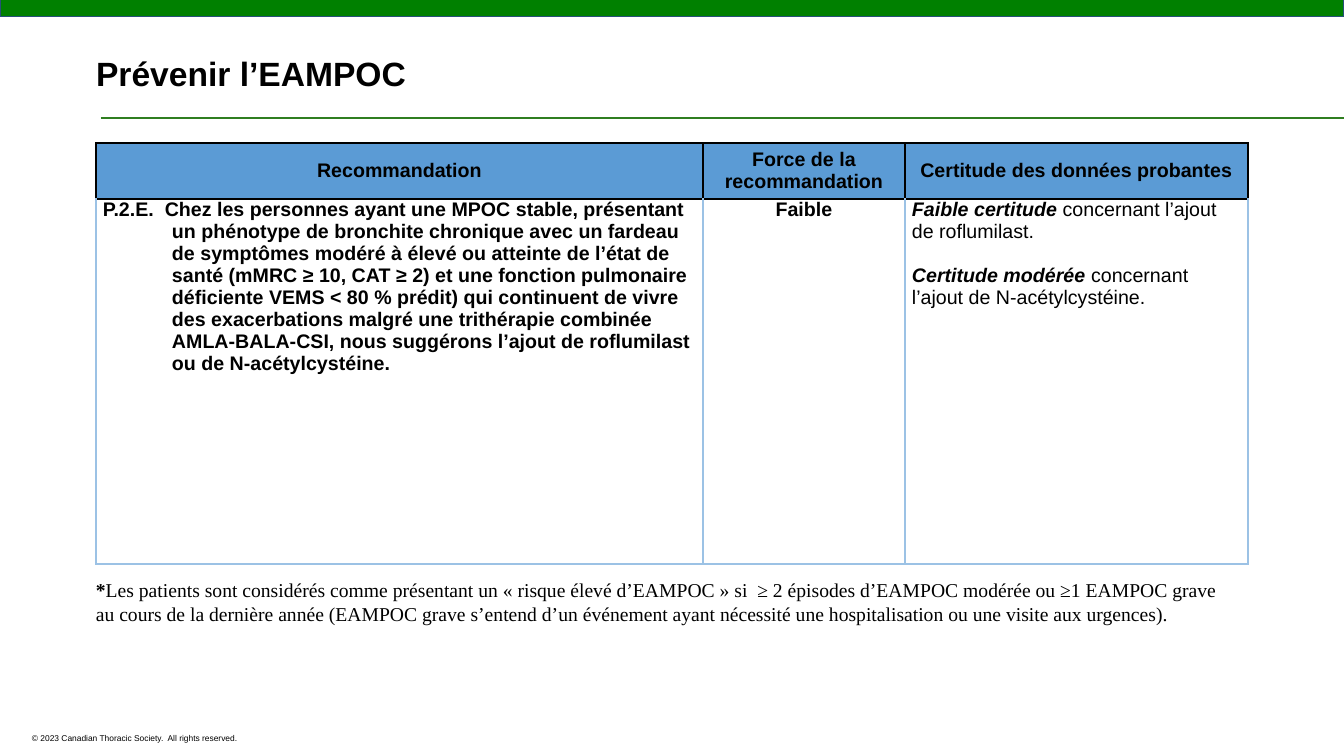
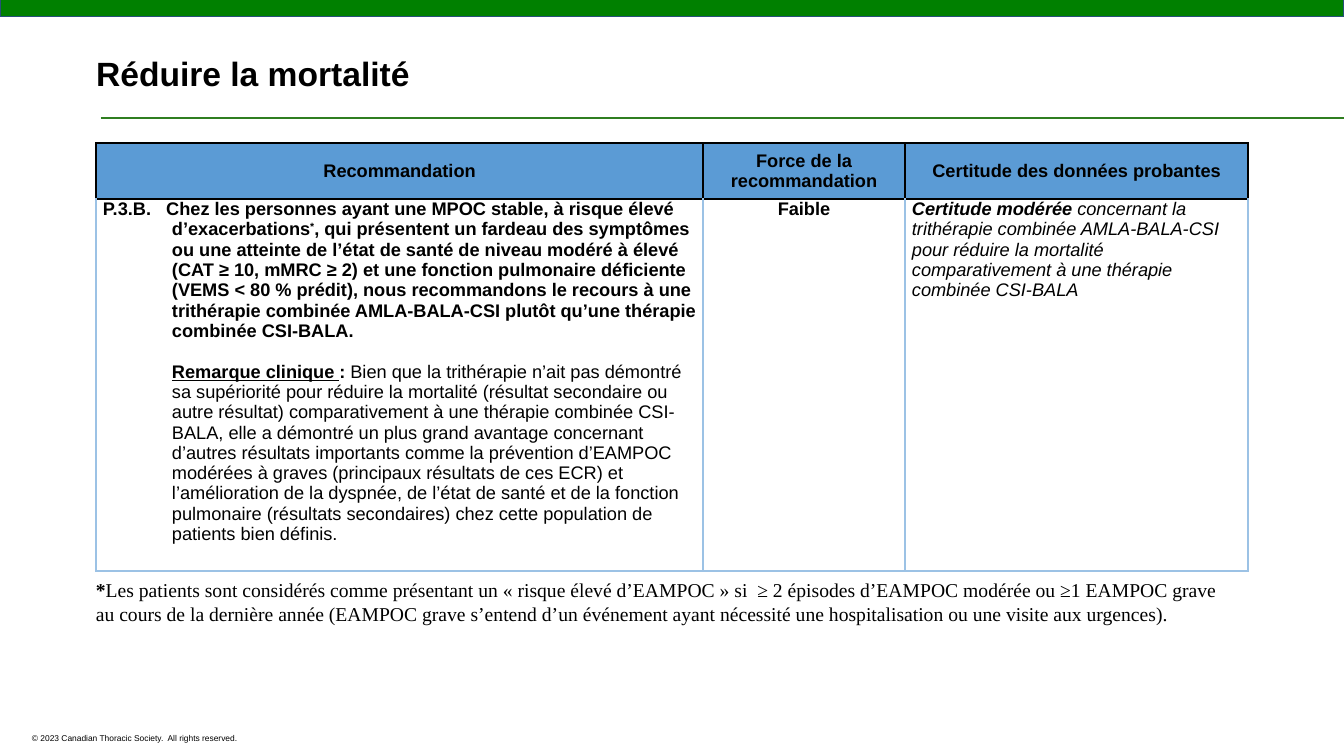
from dataclasses import dataclass

from lxml.etree import SubElement
from pptx import Presentation
from pptx.dml.color import RGBColor
from pptx.enum.shapes import MSO_CONNECTOR, MSO_SHAPE
from pptx.enum.text import MSO_ANCHOR, MSO_AUTO_SIZE, PP_ALIGN
from pptx.oxml.ns import qn
from pptx.slide import Slide
from pptx.table import _Cell
from pptx.text.text import TextFrame
from pptx.util import Emu, Pt

# Scale, colours and fonts
SLIDE_WIDTH, SLIDE_HEIGHT = 1344, 756
EMU_PER_PX = 914400 / 100.8
BLACK, WHITE = "000000", "FFFFFF"
BAND_GREEN, BAND_EDGE, RULE_GREEN = "008000", "265178", "2F7E20"
HEADER_BLUE, BORDER_BLUE = "5B9BD5", "9CC2E5"
SANS, SERIF = "Arial", "Times New Roman"

# Table measures
TABLE_LEFT, TABLE_TOP = 96, 143
COLUMN_WIDTHS = (607, 202, 343)
HEADER_HEIGHT = 56
CELL_MARGIN = 7
HANGING_INDENT = 69
GAP_PER_POINT = 1.12
HEADERS = ("Recommandation", "Force de la recommandation", "Certitude des données probantes")

COPYRIGHT = "© 2023 Canadian Thoracic Society.  All rights reserved."


@dataclass(frozen=True)
class Span:
    text: str
    bold: bool = False
    italic: bool = False
    underline: bool = False
    superscript: bool = False


@dataclass(frozen=True)
class TextBlock:
    spans: tuple[Span, ...]
    indent: int = 0
    hanging: int = 0


@dataclass(frozen=True)
class Recommendation:
    title: str
    font_size: int
    body_height: int
    statement: tuple[TextBlock, ...]
    strength: str
    certainty: tuple[TextBlock, ...]


FOOTNOTE = TextBlock((
    Span("*", bold=True),
    Span("Les patients sont considérés comme présentant un « risque élevé d’EAMPOC » si  ≥ 2 épisodes "
         "d’EAMPOC modérée ou ≥1 EAMPOC grave au cours de la dernière année (EAMPOC grave s’entend d’un "
         "événement ayant nécessité une hospitalisation ou une visite aux urgences)."),
))

RECOMMENDATIONS = (
    Recommendation(
        title="Prévenir l’EAMPOC",
        font_size=14,
        body_height=365,
        statement=(
            TextBlock((
                Span("P.2.E.  Chez les personnes ayant une MPOC stable, présentant un phénotype de bronchite "
                     "chronique avec un fardeau de symptômes modéré à élevé ou atteinte de l’état de santé "
                     "(mMRC ≥ 10, CAT ≥ 2) et une fonction pulmonaire déficiente VEMS < 80 % prédit) qui "
                     "continuent de vivre des exacerbations malgré une trithérapie combinée AMLA-BALA-CSI, "
                     "nous suggérons l’ajout de roflumilast ou de N-acétylcystéine.", bold=True),
            ), HANGING_INDENT, HANGING_INDENT),
        ),
        strength="Faible",
        certainty=(
            TextBlock((
                Span("Faible certitude ", bold=True, italic=True),
                Span("concernant l’ajout de roflumilast."),
            )),
            TextBlock((
                Span("Certitude modérée ", bold=True, italic=True),
                Span("concernant l’ajout de N-acétylcystéine."),
            )),
        ),
    ),
    Recommendation(
        title="Réduire la mortalité",
        font_size=13,
        body_height=372,
        statement=(
            TextBlock((
                Span("P.3.B.   Chez les personnes ayant une MPOC stable, à risque élevé d’exacerbations", bold=True),
                Span("*", bold=True, superscript=True),
                Span(", qui présentent un fardeau des symptômes ou une atteinte de l’état de santé de niveau "
                     "modéré à élevé (CAT ≥ 10, mMRC ≥ 2) et une fonction pulmonaire déficiente (VEMS < 80 % "
                     "prédit), nous recommandons le recours à une trithérapie combinée AMLA-BALA-CSI plutôt "
                     "qu’une thérapie combinée CSI-BALA.", bold=True),
            ), HANGING_INDENT, HANGING_INDENT),
            TextBlock((
                Span("Remarque clinique ", bold=True, underline=True),
                Span(": ", bold=True),
                Span("Bien que la trithérapie n’ait pas démontré sa supériorité pour réduire la mortalité "
                     "(résultat secondaire ou autre résultat) comparativement à une thérapie combinée CSI-BALA, "
                     "elle a démontré un plus grand avantage concernant d’autres résultats importants comme la "
                     "prévention d’EAMPOC modérées à graves (principaux résultats de ces ECR) et l’amélioration "
                     "de la dyspnée, de l’état de santé et de la fonction pulmonaire (résultats secondaires) "
                     "chez cette population de patients bien définis."),
            ), HANGING_INDENT),
        ),
        strength="Faible",
        certainty=(
            TextBlock((
                Span("Certitude modérée", bold=True, italic=True),
                Span(" concernant la trithérapie combinée AMLA-BALA-CSI pour réduire la mortalité "
                     "comparativement à une thérapie combinée CSI-BALA", italic=True),
            )),
        ),
    ),
)


def px(length: int) -> Emu:
    return Emu(round(length * EMU_PER_PX))


def color(value: str) -> RGBColor:
    return RGBColor.from_string(value)


def plain(text: str, bold: bool = False) -> tuple[TextBlock, ...]:
    return (TextBlock((Span(text, bold),)),)


def write_text(frame: TextFrame, blocks: tuple[TextBlock, ...], *, size: int, font: str = SANS,
               align: PP_ALIGN = PP_ALIGN.LEFT) -> None:
    """Fill a text frame; later paragraphs are set off by about one line."""
    for index, block in enumerate(blocks):
        paragraph = frame.add_paragraph() if index else frame.paragraphs[0]
        paragraph.alignment = align
        if index:
            paragraph.space_before = Pt(size * GAP_PER_POINT)
        if block.indent:
            properties = paragraph._p.get_or_add_pPr()
            properties.set("marL", str(px(block.indent)))
            properties.set("indent", str(-px(block.hanging)))
        for span in block.spans:
            run = paragraph.add_run()
            run.text = span.text
            run.font.name = font
            run.font.size = Pt(size)
            run.font.color.rgb = color(BLACK)
            run.font.bold = span.bold
            run.font.italic = span.italic
            run.font.underline = span.underline
            if span.superscript:
                run._r.get_or_add_rPr().set("baseline", "30000")


def add_text(slide: Slide, left: int, top: int, width: int, height: int,
             blocks: tuple[TextBlock, ...], *, size: int, font: str = SANS) -> None:
    frame = slide.shapes.add_textbox(px(left), px(top), px(width), px(height)).text_frame
    frame.word_wrap = True
    write_text(frame, blocks, size=size, font=font)


def add_frame(slide: Slide) -> None:
    """Draw the top band, the rule under the title and the copyright line."""
    band = slide.shapes.add_shape(MSO_SHAPE.RECTANGLE, 0, 0, px(SLIDE_WIDTH), px(17))
    band.shadow.inherit = False
    band.fill.solid()
    band.fill.fore_color.rgb = color(BAND_GREEN)
    band.line.color.rgb = color(BAND_EDGE)
    band.line.width = Pt(0.75)

    rule = slide.shapes.add_connector(MSO_CONNECTOR.STRAIGHT, px(101), px(118), px(SLIDE_WIDTH), px(118))
    rule.line.color.rgb = color(RULE_GREEN)
    rule.line.width = Pt(1)
    SubElement(rule._element.spPr, qn("a:effectLst"))

    add_text(slide, 22, 728, 320, 20, plain(COPYRIGHT), size=6)


def set_title(slide: Slide, text: str) -> None:
    title = slide.shapes.title
    title.left, title.top, title.width, title.height = px(86), px(36), px(988), px(74)
    title.fill.solid()
    title.fill.fore_color.rgb = color(WHITE)
    frame = title.text_frame
    frame.auto_size = MSO_AUTO_SIZE.NONE
    frame.vertical_anchor = MSO_ANCHOR.MIDDLE
    write_text(frame, plain(text, bold=True), size=24)


def set_borders(cell: _Cell, side_color: str) -> None:
    """Give a cell one-point borders with a black top edge."""
    properties = cell._tc.get_or_add_tcPr()
    edges = (("L", side_color), ("R", side_color), ("T", BLACK), ("B", side_color))
    for position, (side, edge_color) in enumerate(edges):
        line = SubElement(properties, qn(f"a:ln{side}"), w=str(Pt(1)))
        fill = SubElement(line, qn("a:solidFill"))
        SubElement(fill, qn("a:srgbClr"), val=edge_color)
        properties.insert(position, line)


def fill_cell(cell: _Cell, blocks: tuple[TextBlock, ...], *, size: int, align: PP_ALIGN, header: bool) -> None:
    cell.margin_left = cell.margin_right = px(CELL_MARGIN)
    cell.margin_top = cell.margin_bottom = 0
    cell.vertical_anchor = MSO_ANCHOR.MIDDLE if header else MSO_ANCHOR.TOP
    if header:
        cell.fill.solid()
        cell.fill.fore_color.rgb = color(HEADER_BLUE)
    else:
        cell.fill.background()
    set_borders(cell, BLACK if header else BORDER_BLUE)
    write_text(cell.text_frame, blocks, size=size, align=align)


def add_recommendation_table(slide: Slide, item: Recommendation) -> None:
    row_heights = (HEADER_HEIGHT, item.body_height)
    table = slide.shapes.add_table(
        len(row_heights), len(COLUMN_WIDTHS), px(TABLE_LEFT), px(TABLE_TOP),
        px(sum(COLUMN_WIDTHS)), px(sum(row_heights))).table
    table.first_row = table.horz_banding = False
    for column, width in zip(table.columns, COLUMN_WIDTHS):
        column.width = px(width)
    for row, height in zip(table.rows, row_heights):
        row.height = px(height)

    bodies = (item.statement, plain(item.strength, bold=True), item.certainty)
    alignments = (PP_ALIGN.LEFT, PP_ALIGN.CENTER, PP_ALIGN.LEFT)
    for index, (heading, body, align) in enumerate(zip(HEADERS, bodies, alignments)):
        fill_cell(table.cell(0, index), plain(heading, bold=True), size=item.font_size,
                  align=PP_ALIGN.CENTER, header=True)
        fill_cell(table.cell(1, index), body, size=item.font_size, align=align, header=False)


def main() -> None:
    presentation = Presentation()
    presentation.slide_width = px(SLIDE_WIDTH)
    presentation.slide_height = px(SLIDE_HEIGHT)
    title_only = presentation.slide_layouts.get_by_name("Title Only")
    for item in RECOMMENDATIONS:
        slide = presentation.slides.add_slide(title_only)
        add_frame(slide)
        set_title(slide, item.title)
        add_recommendation_table(slide, item)
        add_text(slide, 86, 573, 1163, 57, (FOOTNOTE,), size=14, font=SERIF)
    presentation.save("out.pptx")


if __name__ == "__main__":
    main()
